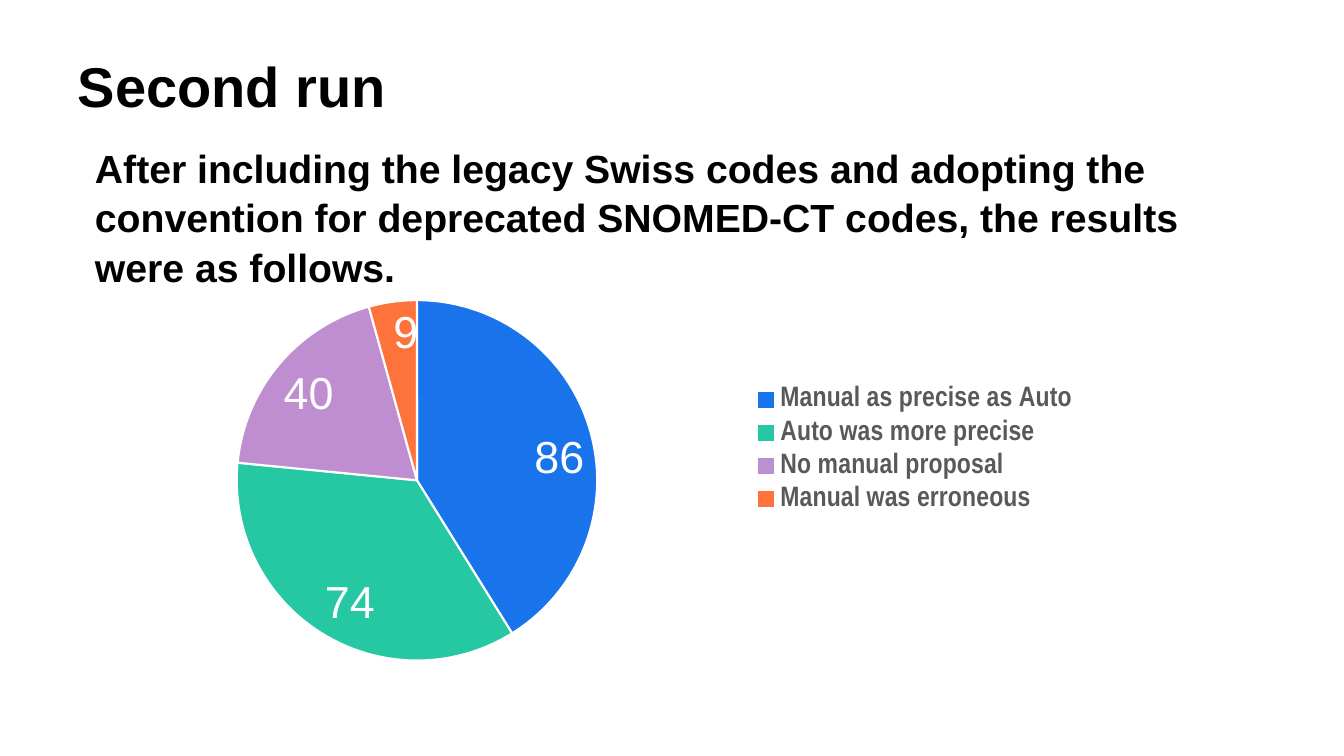
import pptx
import pptx.util
import pptx.chart.data
import pptx.dml.color
import pptx.enum.chart
import pptx.enum.text
import pptx.oxml


def px(n):
    return pptx.util.Emu(round(n * 914400 / 100.8))


def style(font, face, size, color, bold):
    font.name = face
    font.size = pptx.util.Pt(size)
    font.bold = bold
    font.color.rgb = pptx.dml.color.RGBColor.from_string(color)


deck = pptx.Presentation()
deck.slide_width = px(1344)
deck.slide_height = px(756)
slide = deck.slides.add_slide(deck.slide_layouts[5])

title = slide.shapes.title
title.left, title.top, title.width, title.height = px(71), px(40), px(1200), px(121)
intro = slide.shapes.add_textbox(px(85), px(135), px(1200), px(121))

texts = [
    (title, "Second run", 40, 7, 8),
    (intro, "After including the legacy Swiss codes and adopting the convention for "
     "deprecated SNOMED-CT codes, the results were as follows.", 28, 10, 7),
]
for box, words, size, left, top in texts:
    frame = box.text_frame
    frame.word_wrap = True
    frame.auto_size = pptx.enum.text.MSO_AUTO_SIZE.NONE
    frame.vertical_anchor = pptx.enum.text.MSO_ANCHOR.TOP
    frame.margin_left, frame.margin_top = px(left), px(top)
    para = frame.paragraphs[0]
    para.alignment = pptx.enum.text.PP_ALIGN.LEFT
    para.line_spacing = 1.05
    run = para.add_run()
    run.text = words
    style(run.font, "Arial", size, "000000", True)

slices = [
    ("Manual as precise as Auto", 86, "1973EB"),
    ("Auto was more precise", 74, "25C8A2"),
    ("No manual proposal", 40, "BF8ED1"),
    ("Manual was erroneous", 9, "FE733C"),
]
data = pptx.chart.data.CategoryChartData()
data.categories = [name for name, count, color in slices]
data.add_series("Series 1", [count for name, count, color in slices])
kind = pptx.enum.chart.XL_CHART_TYPE.PIE
chart = slide.shapes.add_chart(kind, px(85), px(229), px(1006), px(445), data).chart
chart.has_title = False
style(chart.font, "Arial", 10, "000000", False)

plot = chart.plots[0]
plot.vary_by_categories = True
for order, (name, count, color) in enumerate(slices):
    point = plot.series[0].points[order].format
    point.fill.solid()
    point.fill.fore_color.rgb = pptx.dml.color.RGBColor.from_string(color)
    point.line.color.rgb = pptx.dml.color.RGBColor.from_string("FFFFFF")
    point.line.width = pptx.util.Pt(1.5)

plot.has_data_labels = True
labels = plot.data_labels
labels.show_value = True
labels.show_percentage = False
labels.position = pptx.enum.chart.XL_LABEL_POSITION.INSIDE_END
style(labels.font, "Arial", 32, "FFFFFF", False)

chart.has_legend = True
legend = chart.legend
legend.position = pptx.enum.chart.XL_LEGEND_POSITION.RIGHT
legend.include_in_layout = False
style(legend.font, "Arial Narrow", 20, "595959", True)

area = chart.element.find(".//" + pptx.oxml.ns.qn("c:plotArea"))
key = chart.element.find(".//" + pptx.oxml.ns.qn("c:legend"))
spots = [
    (area, 0, '<c:layoutTarget val="inner"/>', (0.15, 0.16, 0.36, 0.81)),
    (key, 1, "", (0.66, 0.34, 0.33, 0.31)),
]
for part, place, target, sizes in spots:
    for old in part.findall(pptx.oxml.ns.qn("c:layout")):
        part.remove(old)
    sides = "".join(f'<c:{side} val="{size}"/>' for side, size in zip("xywh", sizes))
    part.insert(place, pptx.oxml.parse_xml(
        f'<c:layout {pptx.oxml.ns.nsdecls("c")}><c:manualLayout>{target}'
        f'<c:xMode val="edge"/><c:yMode val="edge"/>{sides}</c:manualLayout></c:layout>'))

deck.save("out.pptx")
